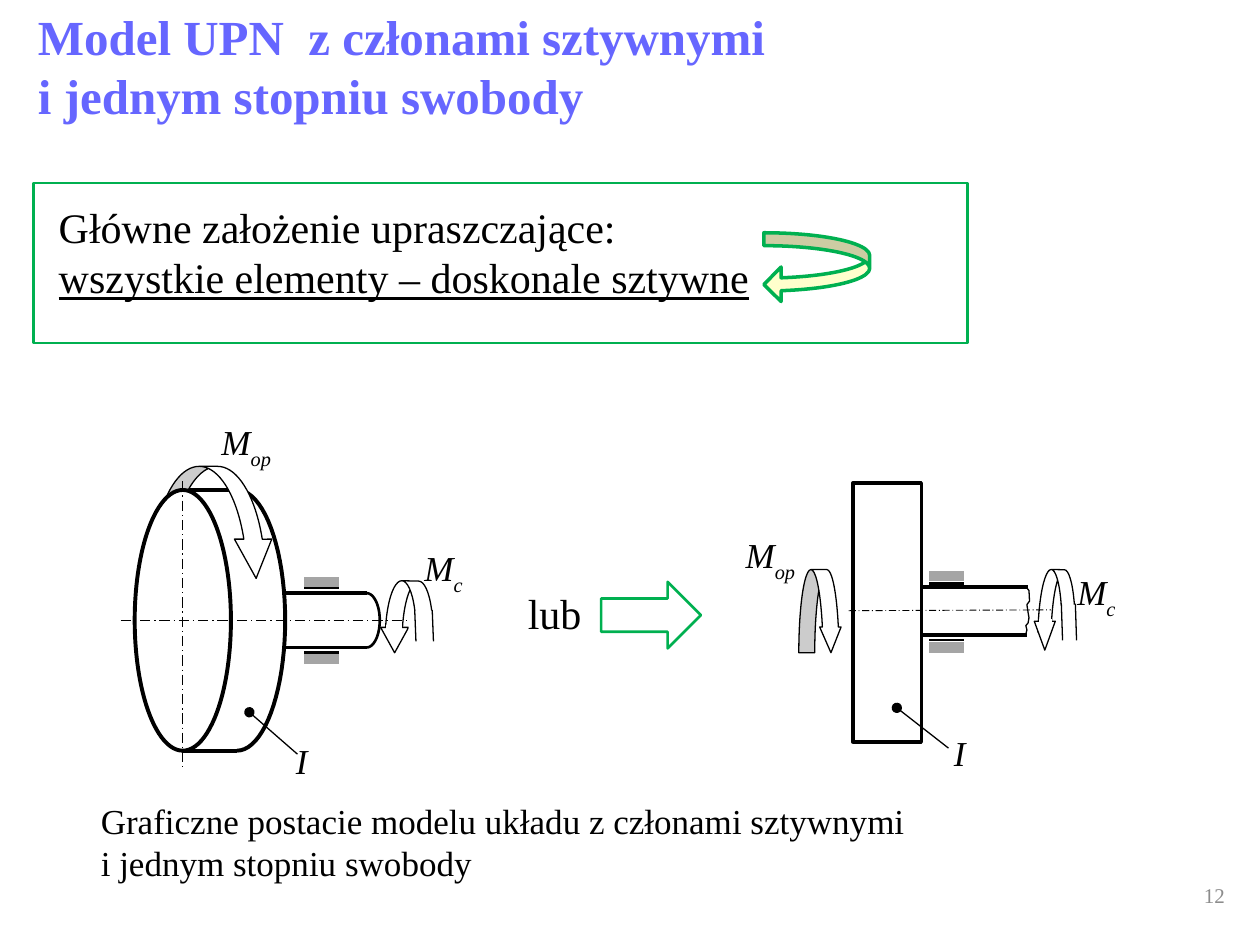
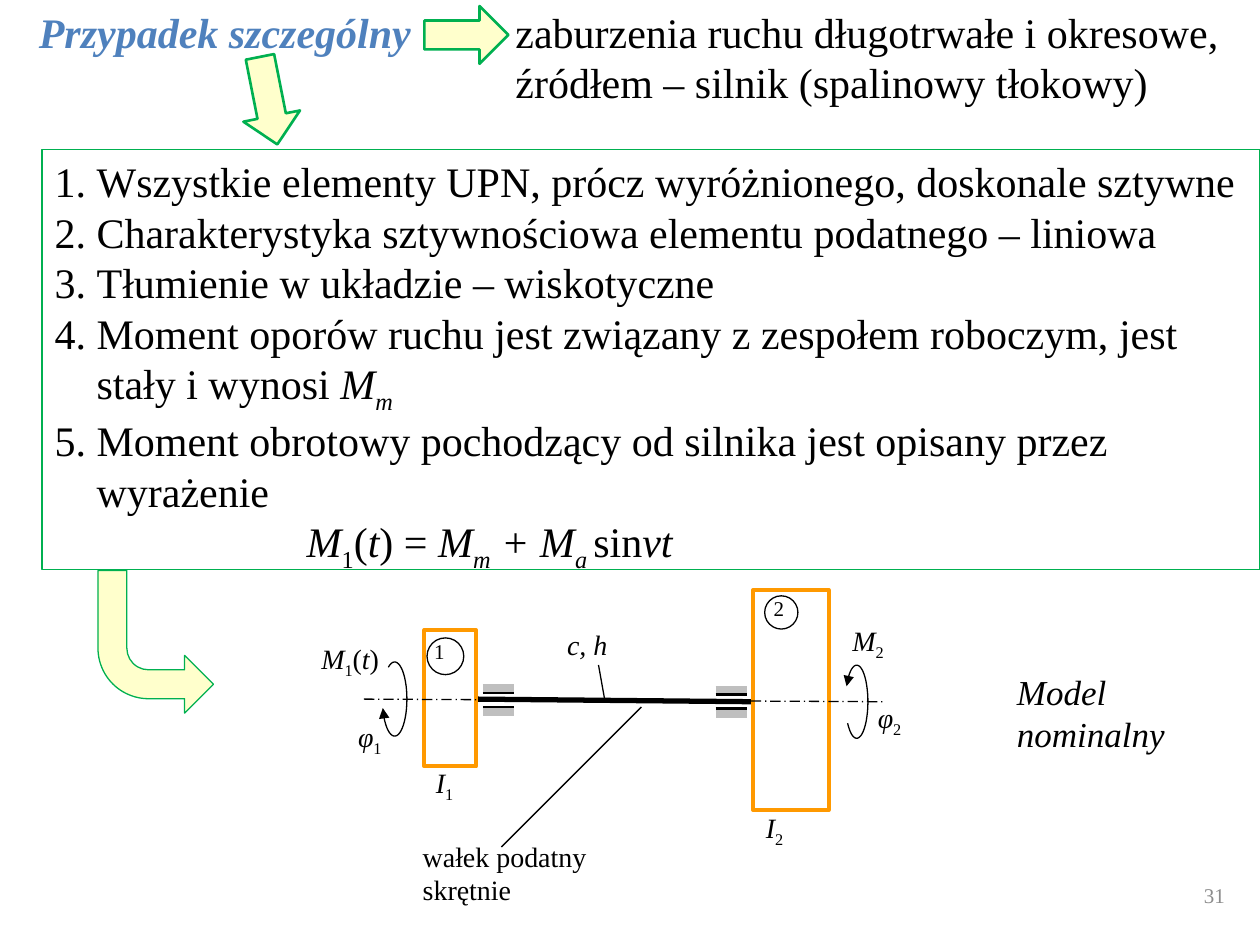
from math import cos, radians, sin

from lxml.etree import SubElement
from pptx import Presentation
from pptx.dml.color import RGBColor
from pptx.enum.dml import MSO_LINE
from pptx.enum.shapes import MSO_CONNECTOR, MSO_SHAPE
from pptx.enum.text import MSO_ANCHOR, MSO_AUTO_SIZE, PP_ALIGN
from pptx.oxml.ns import qn
from pptx.util import Pt

BLACK = RGBColor(0x00, 0x00, 0x00)
WHITE = RGBColor(0xFF, 0xFF, 0xFF)
GREEN = RGBColor(0x00, 0xB0, 0x50)
CREAM = RGBColor(0xFF, 0xFF, 0xCC)
VIOLET = RGBColor(0x66, 0x66, 0xFF)
BLUE = RGBColor(0x4F, 0x81, 0xBD)
ORANGE = RGBColor(0xFF, 0x99, 0x00)
GRAY = RGBColor(0x8C, 0x8C, 0x8C)
STEEL = RGBColor(0xA5, 0xA5, 0xA5)
SILVER = RGBColor(0xBF, 0xBF, 0xBF)
FONT = "Times New Roman"


def put(slide, kind, box, fill, color, width, adjust=(), turn=0):
    """Add a preset shape; fill or color None means none."""
    shape = slide.shapes.add_shape(kind, *map(Pt, box))
    shape.shadow.inherit = False
    for part, tint in ((shape.fill, fill), (shape.line.fill, color)):
        if tint is None:
            part.background()
        else:
            part.solid()
            part.fore_color.rgb = tint
    if color is not None:
        shape.line.width = Pt(width)
    for i, value in enumerate(adjust):
        shape.adjustments[i] = value
    shape.rotation = turn
    return shape


def draw(slide, points, color=BLACK, width=0.75, dash=None, head=None, tail=None):
    """Draw a line through two points, or an open outline through more."""
    spots = [(Pt(x), Pt(y)) for x, y in points]
    if len(spots) == 2:
        shape = slide.shapes.add_connector(MSO_CONNECTOR.STRAIGHT, *spots[0], *spots[1])
    else:
        path = slide.shapes.build_freeform(*spots[0])
        path.add_line_segments(spots[1:], close=False)
        shape = path.convert_to_shape()
        shape.fill.background()
    shape.line.color.rgb = color
    shape.line.width = Pt(width)
    if dash:
        shape.line.dash_style = dash
    props = shape._element.spPr
    for tag, end in (("a:headEnd", head), ("a:tailEnd", tail)):
        if end:
            SubElement(props.find(qn("a:ln")), qn(tag)).set("type", end)
    SubElement(props, qn("a:effectLst"))


deck = Presentation()
deck.slide_width, deck.slide_height = Pt(720), Pt(540)
one = deck.slides.add_slide(deck.slide_layouts[5])
two = deck.slides.add_slide(deck.slide_layouts[1])
AXIS = MSO_LINE.LONG_DASH_DOT
DOWN = MSO_SHAPE.CURVED_DOWN_ARROW
RECT = MSO_SHAPE.RECTANGLE

# Slide 1: frame and arrows
put(one, RECT, (19, 104.5, 534, 91.5), None, GREEN, 1.5)
put(one, MSO_SHAPE.CURVED_LEFT_ARROW, (436.5, 133, 60.5, 39.5), CREAM, GREEN, 2,
    (0.187, 0.5, 0.25))
put(one, MSO_SHAPE.RIGHT_ARROW, (343.5, 332.5, 57, 38), None, GREEN, 1.5)

# Arcs on both slides: centre, radii, start and end angle, arrowheads
arcs = [
    (one, 135.5, 354.5, 27.5, 74.5, -90, 90, 2.25, None, None),
    (one, 209.5, 354.5, 7.5, 15.5, -90, 90, 1.5, None, None),
    (two, 489.6, 401, 6.4, 20.9, 205, 504, 0.75, "triangle", None),
    (two, 225.5, 399.5, 7, 21.2, 239, 526, 0.75, None, "triangle"),
]
STEPS = 40
for slide, x, y, wide, high, start, end, width, head, tail in arcs:
    turns = [radians(start + (end - start) * i / STEPS) for i in range(STEPS + 1)]
    draw(slide, [(x + wide * cos(t), y + high * sin(t)) for t in turns],
         width=width, head=head, tail=tail)

# Slide 1: disc edges and shafts
edges = [(104.5, 135.5, 280), (104.5, 135.5, 429), (163, 210, 339),
         (163, 210, 370), (526, 587.5, 335.5), (526, 587, 363)]
for left, right, y in edges:
    draw(one, [(left, y), (right, y)], width=2.25)
draw(one, [(586.8, 336), (588, 337.5), (588.3, 343.5), (586.8, 345.5), (587.5, 350),
           (588, 353), (587.5, 356), (586.2, 357.5), (586.8, 360), (586, 363)])

# Slide 1: discs, driving moments and axes
put(one, DOWN, (86.5, 266.5, 70.5, 64), WHITE, BLACK, 0.75, (0.164, 0.333, 0.35))
put(one, MSO_SHAPE.OVAL, (77, 280, 55, 149), WHITE, BLACK, 2.25)
put(one, RECT, (487.5, 276, 39, 148), None, BLACK, 2)
put(one, DOWN, (456.5, 325.5, 24.5, 47.5), WHITE, BLACK, 0.75, (0.372, 0.5, 0.6))
draw(one, [(104.5, 275), (104.5, 438.5)], dash=AXIS)
draw(one, [(69, 354.5), (235, 354.5)], dash=AXIS)
draw(one, [(485, 349), (600.5, 348.5)], width=0.5, dash=AXIS)

# Slide 1: resisting moments: loop, tip, mask, ends of the band
loops = [
    ((220.5, 332, 29.5, 31), (217.5, 358.5, 16, 14.5), (233.5, 349, 17, 16.5),
     (237, 247), 348.5, 366.5, 229.5),
    ((593.5, 325.5, 23, 36), (591, 355, 12, 16.5), (604, 345.5, 13.5, 19.5),
     (606.5, 614.5), 345, 366, 601),
]
for band, tip, mask, sides, top, base, right in loops:
    put(one, DOWN, band, None, BLACK, 0.75, (0.328, 0.481, 0.378), 1.2)
    put(one, MSO_SHAPE.ISOSCELES_TRIANGLE, tip, WHITE, BLACK, 0.75, turn=180)
    put(one, RECT, mask, WHITE, None, 0)
    for x in sides:
        draw(one, [(x, top), (x + 0.7, base)])
    draw(one, [(band[0], tip[1]), (right, tip[1])], WHITE, 2.25)

for points in ([(142.5, 407), (170, 431)], [(512.5, 404.5), (542, 427.5)]):
    draw(one, points, head="oval")

# Slide 2: arrows
put(two, MSO_SHAPE.RIGHT_ARROW, (242.5, 3.5, 48, 33), CREAM, GREEN, 1.5)
put(two, MSO_SHAPE.RIGHT_ARROW, (128, 41, 51, 33), CREAM, GREEN, 1.5, turn=78.8)
bent = put(two, MSO_SHAPE.BENT_ARROW, (56, 326, 66, 81.5), CREAM, GREEN, 0.75)
bent._element.spPr.find(qn("a:xfrm")).set("flipV", "1")

# Slide 2: shaft, two masses, leaders
draw(two, [(272, 399.5), (430.5, 401)], width=3)
for box in ((242.5, 360, 29.5, 78), (430.5, 337, 43, 126)):
    put(two, RECT, box, WHITE, ORANGE, 2.25)
for box in ((437, 340.5, 19, 19), (244, 364.5, 21, 21)):
    put(two, MSO_SHAPE.OVAL, box, None, BLACK, 0.75)
draw(two, [(208, 399.5), (506, 401)], dash=AXIS)
draw(two, [(342, 380), (345.5, 399.5)])
draw(two, [(366.5, 404), (286.5, 484)])

# Bearings on both slides: a gray block and a black edge on each side
bearings = [
    (one, 174, 20, 354.5, 18.5, 22, STEEL, 6),
    (one, 531, 20, 349.6, 16.2, 20.3, STEEL, 6),
    (two, 276, 18, 400, 4, 7, SILVER, 4.5),
    (two, 409, 18, 401, 4, 7, SILVER, 4.5),
]
for slide, x, size, mid, edge, block, color, width in bearings:
    for side in (-1, 1):
        for gap, tint, thick in ((block, color, width), (edge, BLACK, 1.5)):
            y = mid + side * gap
            draw(slide, [(x, y), (x + size, y)], tint, thick)

# Texts: each paragraph is a list of (text, marks);
# marks: b bold, i italic, u underline, _ and - subscript
title, head, body = one.shapes.title, two.shapes.title, two.placeholders[1]
drive = [[("M", "i"), ("op", "i-")]]
brake = [[("M", "i"), ("c", "i-")]]
mass = [[("I", "i")]]
texts = [
    (title, (14.5, 0, 439, 75), 28, VIOLET,
     [[("Model UPN  z członami sztywnymi", "b")], [("i jednym stopniu swobody", "b")]]),
    (one, (26.5, 111.5, 498, 65.5), 24, BLACK,
     [[("Główne założenie upraszczające:", "")],
      [("wszystkie elementy – doskonale sztywne", "u")]]),
    (one, (119.5, 237, 52, 38), 20, BLACK, drive),
    (one, (419, 301.5, 52, 38), 20, BLACK, drive),
    (one, (235.5, 309, 41, 36.5), 20, BLACK, brake),
    (one, (608.5, 322.5, 41, 36.5), 20, BLACK, brake),
    (one, (162, 419, 24, 29.5), 20, BLACK, mass),
    (one, (538, 414.5, 24, 29.5), 20, BLACK, mass),
    (one, (294.5, 332, 48, 36), 24, BLACK, [[("lub", "")]]),
    (one, (50.5, 453.5, 508, 55.5), 20, BLACK,
     [[("Graficzne postacie modelu układu z członami sztywnymi", "")],
      [("i jednym stopniu swobody", "")]]),
    (head, (15, 0, 230, 37), 24, BLUE, [[("Przypadek szczególny", "bi")]]),
    (two, (287.5, 0, 432, 65.5), 24, BLACK,
     [[("zaburzenia ruchu długotrwałe i okresowe,", "")],
      [("źródłem – silnik (spalinowy tłokowy)", "")]]),
    (body, (24, 85.5, 696, 240), 24, BLACK,
     [[("Wszystkie elementy UPN, prócz wyróżnionego, doskonale sztywne", "")],
      [("Charakterystyka sztywnościowa elementu podatnego – liniowa", "")],
      [("Tłumienie w układzie – wiskotyczne", "")],
      [("Moment oporów ruchu jest związany z zespołem roboczym, jest stały i wynosi ", ""),
       ("M", "i"), ("m", "i_")],
      [("Moment obrotowy pochodzący od silnika jest opisany przez wyrażenie", "")],
      [("M", "i"), ("1", "_"), ("(", ""), ("t", "i"), (") = ", ""), ("M", "i"),
       ("m", "i_"), (" + M", "i"), ("a ", "i_"), ("sin", ""), ("νt", "i")]]),
    (two, (480, 353, 52.5, 46), 16, BLACK, [[("M", "i"), ("2", "_")]]),
    (two, (176.5, 363, 76, 46), 16, BLACK,
     [[("M", "i"), ("1", "_"), ("(", ""), ("t", "i"), (")", "")]]),
    (two, (494.5, 396.5, 46, 44.5), 16, BLACK, [[("φ", "i"), ("2", "_")]]),
    (two, (197.5, 407.5, 42.5, 44.5), 16, BLACK, [[("φ", "i"), ("1", "_")]]),
    (two, (430.5, 459.5, 39.5, 37.5), 16, BLACK, [[("I", "i"), ("2", "_")]]),
    (two, (242, 434, 39.5, 37.5), 16, BLACK, [[("I", "i"), ("1", "_")]]),
    (two, (435, 337, 25, 24.5), 12, BLACK, [[("2", "")]]),
    (two, (241, 361.5, 28, 27.5), 12, BLACK, [[("1", "")]]),
    (two, (317, 355, 57, 36), 16, BLACK, [[("c, h", "i")]]),
    (two, (234.5, 476, 149, 62), 16, BLACK,
     [[("wałek podatny", "")], [("skrętnie", "")]]),
    (two, (574, 379.5, 114, 55.5), 20, BLACK,
     [[("Model", "i")], [("nominalny", "i")]]),
    (one, (675.5, 501, 31.5, 22), 12, GRAY, [[("12", "")]]),
    (two, (675.5, 501, 31.5, 22), 12, GRAY, [[("31", "")]]),
]
for spot, box, size, color, lines in texts:
    shape = spot
    if spot in (one, two):
        shape = spot.shapes.add_textbox(0, 0, 0, 0)
    shape.left, shape.top, shape.width, shape.height = map(Pt, box)
    frame = shape.text_frame
    frame.word_wrap = True
    frame.auto_size = MSO_AUTO_SIZE.NONE
    frame.vertical_anchor = MSO_ANCHOR.TOP
    for i, line in enumerate(lines):
        par = frame.add_paragraph() if i else frame.paragraphs[0]
        par.alignment = PP_ALIGN.RIGHT if color == GRAY else PP_ALIGN.LEFT
        par.space_before = Pt(0)
        for words, marks in line:
            run = par.add_run()
            run.text = words
            font = run.font
            font.name, font.size, font.color.rgb = FONT, Pt(size), color
            font.bold, font.italic = "b" in marks, "i" in marks
            font.underline = "u" in marks
            for mark, shift in (("_", "-25000"), ("-", "-30000")):
                if mark in marks:
                    font._element.set("baseline", shift)

# Slide 2: numbered list with a formula below, in a green frame
body.line.color.rgb = GREEN
body.line.width = Pt(0.75)
*items, sum_line = body.text_frame.paragraphs
for par in items:
    props = par._p.get_or_add_pPr()
    props.set("marL", str(Pt(24)))
    props.set("indent", str(-Pt(24)))
    SubElement(props, qn("a:buFont")).set("typeface", FONT)
    SubElement(props, qn("a:buAutoNum")).set("type", "arabicPeriod")
props = sum_line._p.get_or_add_pPr()
props.set("marL", str(Pt(144)))
props.set("indent", "0")
SubElement(props, qn("a:buNone"))

deck.save("out.pptx")
